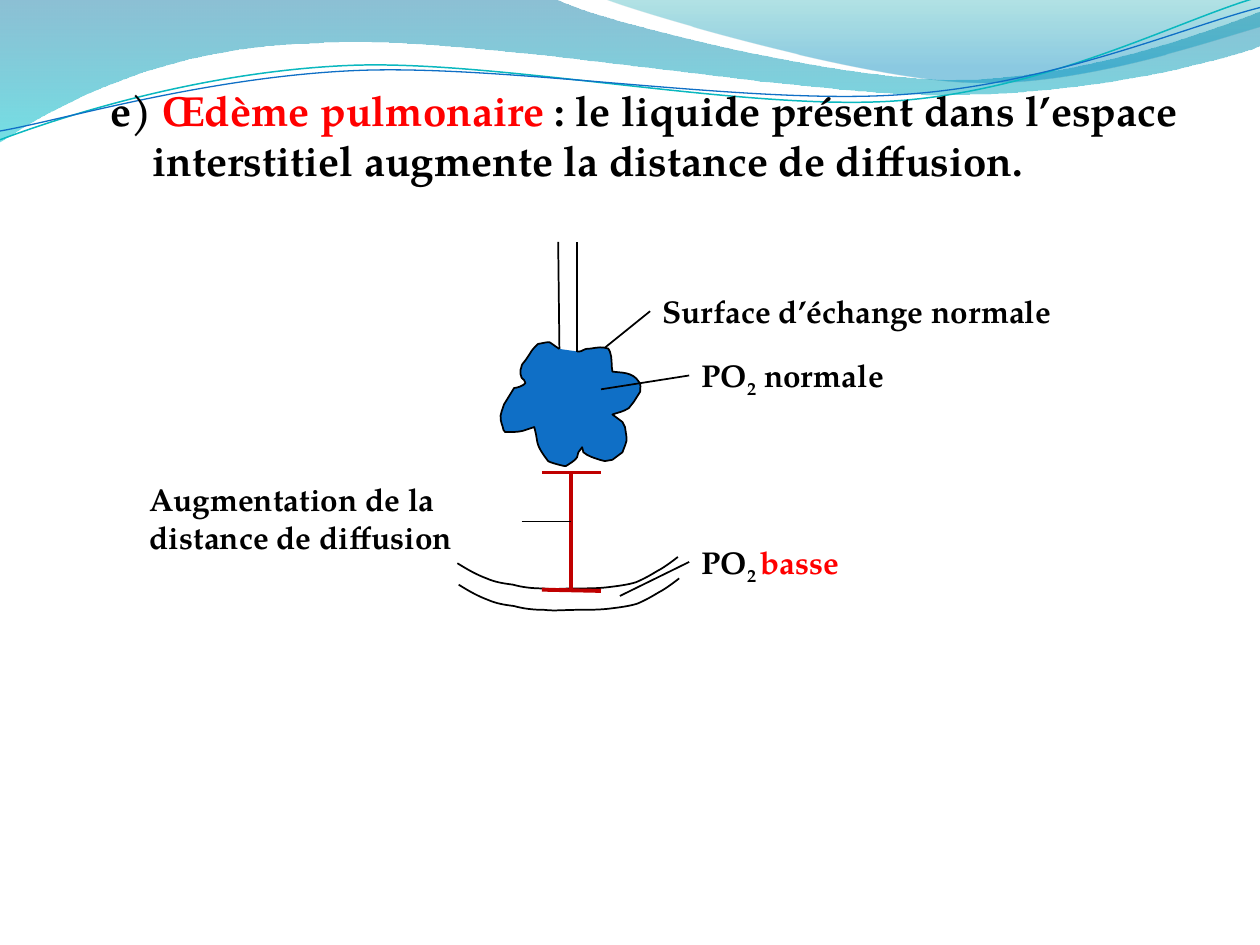
from lxml import etree
from pptx import Presentation
from pptx.dml.color import RGBColor
from pptx.enum.shapes import MSO_CONNECTOR
from pptx.enum.text import MSO_ANCHOR, MSO_AUTO_SIZE, PP_ALIGN
from pptx.oxml.ns import qn
from pptx.util import Inches, Pt

STRAIGHT = MSO_CONNECTOR.STRAIGHT
TOP, LEFT, NO_AUTOFIT = MSO_ANCHOR.TOP, PP_ALIGN.LEFT, MSO_AUTO_SIZE.NONE
FONT = "TeX Gyre Pagella"
BLACK = RGBColor(0x00, 0x00, 0x00)
RED = RGBColor(0xFF, 0x00, 0x00)
DARK_RED = RGBColor(0xC0, 0x00, 0x00)
BLUE = RGBColor(0x0F, 0x6F, 0xC6)
TEAL = RGBColor(0x0A, 0xB8, 0xBF)
DEEP_BLUE = RGBColor(0x00, 0x74, 0xA1)
AQUA = RGBColor(0x00, 0xC6, 0xCF)
SEA_GREEN = RGBColor(0x00, 0xA1, 0xA9)
SKY_BLUE = RGBColor(0x00, 0x8B, 0xBF)

presentation = Presentation()
presentation.slide_width = Inches(10)
presentation.slide_height = Inches(7.5)
slide = presentation.slides.add_slide(presentation.slide_layouts[5])


def add_curve(start, segments, offset=(0, 0), closed=False, line=None, width=1):
    """Draw an outline; a segment is (x, y) for a line, six numbers for a Bézier curve."""
    def to_emu(x, y):
        return Inches(x + offset[0]), Inches(y + offset[1])

    builder = slide.shapes.build_freeform(*to_emu(*start))
    builder.add_line_segments([to_emu(*segment[-2:]) for segment in segments], close=closed)
    shape = builder.convert_to_shape()
    straight_segments = list(shape._element.iter(qn("a:lnTo")))
    for element, segment in zip(straight_segments, segments):
        if len(segment) == 6:
            curve = etree.Element(qn("a:cubicBezTo"))
            for x, y in zip(segment[::2], segment[1::2]):
                x, y = to_emu(x, y)
                point = etree.SubElement(curve, qn("a:pt"))
                point.set("x", str(x - shape.left))
                point.set("y", str(y - shape.top))
            element.getparent().replace(element, curve)
    shape.shadow.inherit = False
    shape.fill.background()
    if line is None:
        shape.line.fill.background()
    else:
        shape.line.color.rgb = line
        shape.line.width = Pt(width)
    return shape


def write_text(shape, lines, size=18, hanging=0):
    """Fill a shape with lines of (text, colour, baseline) runs; later lines are indented."""
    frame = shape.text_frame
    frame.word_wrap = True
    frame.auto_size = NO_AUTOFIT
    frame.vertical_anchor = TOP
    for index, runs in enumerate(lines):
        paragraph = frame.add_paragraph() if index else frame.paragraphs[0]
        paragraph.alignment = LEFT
        if index and hanging:
            paragraph._p.get_or_add_pPr().set("marL", str(Inches(hanging)))
        for text, color, baseline in runs:
            run = paragraph.add_run()
            run.text = text
            run.font.name = FONT
            run.font.size = Pt(size)
            run.font.bold = True
            run.font.color.rgb = color
            if baseline:
                run.font._element.set("baseline", str(baseline * 1000))


# Waves along the top: (start, segments, ((position, colour, opacity %), ...))
waves = [
    ((0, 0), [(4.4, -0.01), (4.76, 0.17, 6.64, 0.63, 7.58, 0.63),
              (8.53, 0.63, 9.58, 0.26, 10, 0.09), (10.01, 0.36),
              (9.83, 0.44, 8.7, 0.76, 7.46, 0.75), (6.22, 0.75, 3.82, 0.28, 2.57, 0.34),
              (1.29, 0.36, 0.46, 0.83, -0.01, 1.13)],
     ((0, DEEP_BLUE, 45), (1, AQUA, 55))),
    ((4.79, -0.01), [(5.09, 0.11, 6.82, 0.62, 7.69, 0.65),
                     (8.56, 0.69, 9.61, 0.32, 10, 0.21), (10, 0)],
     ((0, SEA_GREEN, 30), (0.8, SKY_BLUE, 45))),
]
for start, segments, stops in waves:
    wave = add_curve(start, segments, closed=True)
    wave.fill.gradient()
    wave.fill.gradient_angle = 270
    for stop, (position, color, opacity) in zip(wave.fill.gradient_stops, stops):
        stop.position = position
        stop.color.rgb = color
    for element, (position, color, opacity) in zip(wave._element.iter(qn("a:srgbClr")), stops):
        etree.SubElement(element, qn("a:alpha")).set("val", str(opacity * 1000))

add_curve((0, 1.11), [(0.48, 0.93, 1.58, 0.57, 2.77, 0.52), (3.95, 0.47, 5.93, 0.89, 7.13, 0.8),
                      (8.33, 0.71, 9.38, 0.15, 9.98, -0.02)], line=TEAL, width=0.85)
add_curve((0, 1.04), [(0.47, 0.96, 1.64, 0.61, 2.83, 0.56), (4.03, 0.51, 5.97, 0.84, 7.17, 0.75),
                      (8.36, 0.67, 9.41, 0.21, 10, 0.06)], line=BLUE, width=0.75)

# Alveolus
alveolus = add_curve((4.44, 2.77), [
    (4.33, 2.7, 4.39, 2.71, 4.27, 2.73), (4.2, 2.8, 4.24, 2.76, 4.17, 2.86),
    (4.13, 2.91, 4.15, 2.88, 4.13, 2.94), (4.13, 2.96, 4.13, 2.98, 4.14, 3),
    (4.15, 3.01, 4.17, 3.02, 4.17, 3.04), (4.16, 3.06, 4.1, 3.08, 4.08, 3.08),
    (4, 3.21), (3.97, 3.3, 3.96, 3.3, 3.99, 3.39),
    (3.99, 3.41, 4, 3.42, 4.01, 3.43), (4.06, 3.43, 4.11, 3.43, 4.15, 3.42),
    (4.24, 3.39), (4.25, 3.43),
    (4.26, 3.47, 4.26, 3.5, 4.27, 3.53), (4.28, 3.56, 4.3, 3.59, 4.32, 3.62),
    (4.35, 3.66), (4.36, 3.67, 4.47, 3.7, 4.49, 3.7), (4.52, 3.68, 4.56, 3.66, 4.58, 3.63),
    (4.59, 3.59), (4.62, 3.55), (4.63, 3.59), (4.66, 3.62, 4.73, 3.64, 4.76, 3.65),
    (4.8, 3.66), (4.86, 3.65), (4.94, 3.59),
    (4.98, 3.48, 4.98, 3.52, 4.96, 3.39), (4.94, 3.35), (4.86, 3.29),
    (4.92, 3.27, 4.94, 3.27, 4.99, 3.24), (5.03, 3.19), (5.08, 3.11),
    (5.08, 3.08, 5.09, 3.05, 5.07, 3.03), (5.02, 2.95, 4.93, 2.96, 4.86, 2.95),
    (4.85, 2.9, 4.86, 2.84, 4.84, 2.79), (4.84, 2.77, 4.82, 2.76, 4.8, 2.76),
    (4.75, 2.75, 4.7, 2.77, 4.65, 2.77), (4.6, 2.79, 4.62, 2.79, 4.58, 2.79),
], line=BLACK)
alveolus.fill.solid()
alveolus.fill.fore_color.rgb = BLUE

# Capillary: two parallel walls
capillary_wall = [
    (3.71, 4.52, 3.78, 4.56, 3.86, 4.59), (3.93, 4.62, 3.99, 4.63, 4.07, 4.64),
    (4.14, 4.66, 4.22, 4.67, 4.31, 4.67), (4.39, 4.68, 4.47, 4.67, 4.56, 4.67),
    (4.65, 4.67, 4.75, 4.67, 4.83, 4.66), (4.91, 4.65, 4.99, 4.64, 5.05, 4.62),
    (5.12, 4.59, 5.17, 4.56, 5.22, 4.53), (5.28, 4.5, 5.38, 4.42, 5.38, 4.42),
]
for offset in ((0, 0), (0.01, 0.17)):
    add_curve((3.63, 4.47), capillary_wall, offset=offset, line=BLACK)

# Straight lines: (from x, from y, to x, to y, colour, width)
straight_lines = [
    (4.44, 2.77, 4.43, 1.92, BLACK, 1),  # airway
    (4.58, 2.79, 4.58, 1.92, BLACK, 1),
    (5.47, 2.98, 4.77, 3.09, BLACK, 1),  # leaders
    (5.47, 4.46, 4.92, 4.73, BLACK, 1),
    (5.16, 2.47, 4.8, 2.76, BLACK, 1),
    (4.3, 3.75, 4.77, 3.75, DARK_RED, 2.25),  # diffusion distance
    (4.3, 4.68, 4.77, 4.69, DARK_RED, 2.25),
    (4.53, 3.75, 4.53, 4.69, DARK_RED, 2.25),
    (4.14, 4.14, 4.53, 4.14, BLACK, 1),
]
for *ends, color, width in straight_lines:
    connector = slide.shapes.add_connector(STRAIGHT, *map(Inches, ends))
    connector.line.color.rgb = color
    connector.line.width = Pt(width)
    etree.SubElement(connector._element.spPr, qn("a:effectLst"))

# Labels: (left, top, width, height, lines)
labels = [
    (5.47, 2.78, 1.73, 0.4, [[("PO", BLACK, 0), ("2", BLACK, -25), (" normale", BLACK, 0)]]),
    (5.47, 4.26, 1.37, 0.4, [[("PO", BLACK, 0), ("2 ", BLACK, -25), ("basse", RED, 0)]]),
    (5.16, 2.27, 3.37, 0.4, [[("Surface d’échange normale", BLACK, 0)]]),
    (1.09, 3.76, 2.68, 0.71, [[("Augmentation de la", BLACK, 0)],
                              [("distance de diffusion", BLACK, 0)]]),
]
for *box, lines in labels:
    write_text(slide.shapes.add_textbox(*map(Inches, box)), lines)

# Title, brought in front of the waves
title = slide.shapes.title
title.left, title.top, title.width, title.height = map(Inches, (0.78, 0.62, 8.9, 0.91))
write_text(title, [
    [("e) ", BLACK, 0), ("Œdème pulmonaire ", RED, 0),
     (": le liquide présent dans l’espace", BLACK, 0)],
    [("interstitiel augmente la distance de diffusion.", BLACK, 0)],
], size=24, hanging=0.33)
slide.shapes._spTree.append(title._element)

presentation.save("out.pptx")
